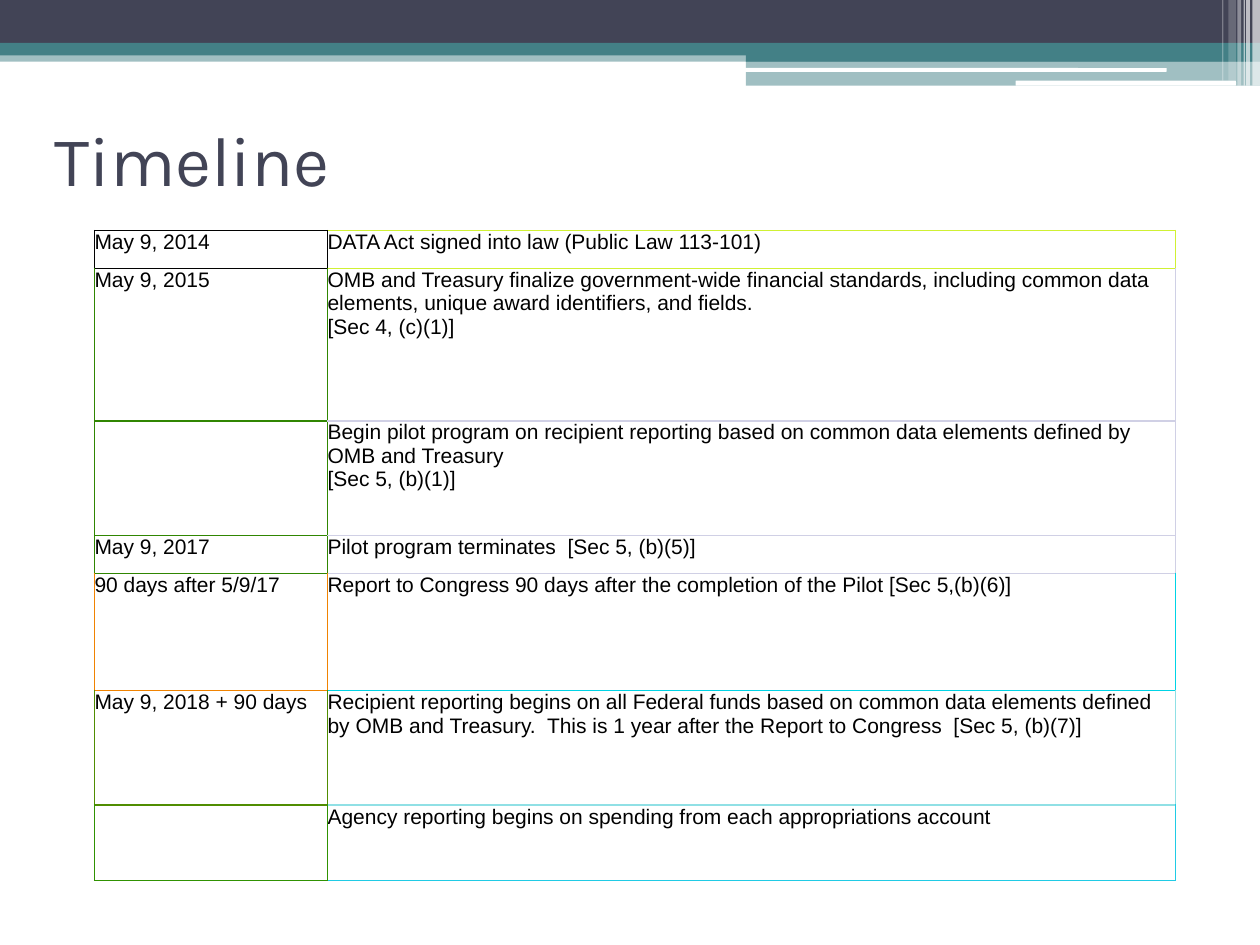
from typing import NamedTuple

from lxml import etree
from pptx import Presentation
from pptx.dml.color import RGBColor
from pptx.enum import shapes, text
from pptx.oxml import ns
from pptx.util import Inches, Pt

NAVY = RGBColor(0x42, 0x44, 0x56)
TEAL = RGBColor(0x43, 0x80, 0x86)
WHITE = RGBColor(0xFF, 0xFF, 0xFF)
BLACK = RGBColor(0x01, 0x01, 0x01)
LIME = RGBColor(0xD0, 0xF1, 0x34)
GREEN = RGBColor(0x30, 0x86, 0x01)
OLIVE = RGBColor(0x50, 0x8D, 0x01)
LEAF = RGBColor(0x30, 0x92, 0x01)
LILAC = RGBColor(0xD0, 0xD0, 0xE5)
ORANGE = RGBColor(0xF0, 0x83, 0x01)
CYAN = RGBColor(0x00, 0xD3, 0xE5)
PALE_CYAN = RGBColor(0x90, 0xE0, 0xE5)
SKY = RGBColor(0x20, 0xCB, 0xE5)


class Bar(NamedTuple):
    left: float
    top: float
    width: float
    height: float
    color: RGBColor
    alpha: int = 100
    rounded: bool = False


class Milestone(NamedTuple):
    height: float
    date: str
    event: str
    date_border: RGBColor
    event_border: RGBColor


BARS = [
    Bar(0, 0.4, 10, 0.09, TEAL, 50),
    Bar(0, 0, 10, 0.34, NAVY),
    Bar(0, 0.34, 10, 0.1, TEAL),
    Bar(5.92, 0.39, 4.08, 0.1, TEAL),
    Bar(5.92, 0.48, 4.08, 0.2, TEAL, 50),
    Bar(5.91, 0.54, 3.35, 0.03, WHITE, rounded=True),
    Bar(8.06, 0.64, 1.75, 0.04, WHITE, rounded=True),
    Bar(9.94, 0, 0.06, 0.68, WHITE, 65),
    Bar(9.89, 0, 0.03, 0.68, WHITE, 65),
    Bar(9.87, 0, 0.01, 0.68, WHITE, 60),
    Bar(9.82, 0, 0.03, 0.68, WHITE, 40),
    Bar(9.75, 0, 0.06, 0.64, WHITE, 20),
    Bar(9.7, 0, 0.01, 0.64, WHITE, 30),
]

COLUMNS = [1.85, 6.73]
MILESTONES = [
    Milestone(0.3, "May 9, 2014", "DATA Act signed into law (Public Law 113-101)", BLACK, LIME),
    Milestone(1.21, "May 9, 2015",
              "OMB and Treasury finalize government-wide financial standards, including "
              "common data elements, unique award identifiers, and fields.\n[Sec 4, (c)(1)]",
              GREEN, LILAC),
    Milestone(0.91, "",
              "Begin pilot program on recipient reporting based on common data elements "
              "defined by OMB and Treasury\n[Sec 5, (b)(1)]", GREEN, LILAC),
    Milestone(0.3, "May 9, 2017", "Pilot program terminates  [Sec 5, (b)(5)]", GREEN, LILAC),
    Milestone(0.93, "90 days after 5/9/17",
              "Report to Congress 90 days after the completion of the Pilot [Sec 5,(b)(6)]",
              ORANGE, CYAN),
    Milestone(0.91, "May 9, 2018 + 90 days",
              "Recipient reporting begins on all Federal funds based on common data elements "
              "defined by OMB and Treasury.  This is 1 year after the Report to Congress  "
              "[Sec 5, (b)(7)]", OLIVE, PALE_CYAN),
    Milestone(0.6, "", "Agency reporting begins on spending from each appropriations account",
              LEAF, SKY),
]


def add_bar(slide, bar: Bar) -> None:
    kind = shapes.MSO_SHAPE.ROUNDED_RECTANGLE if bar.rounded else shapes.MSO_SHAPE.RECTANGLE
    sp = slide.shapes.add_shape(kind, *(Inches(v) for v in bar[:4]))
    sp.shadow.inherit = False
    sp.line.fill.background()
    sp.fill.solid()
    sp.fill.fore_color.rgb = bar.color
    if bar.alpha < 100:
        color = sp.fill._xPr.find(".//" + ns.qn("a:srgbClr"))
        etree.SubElement(color, ns.qn("a:alpha"), val=str(bar.alpha * 1000))


def set_borders(cell, left: RGBColor, right: RGBColor, top: RGBColor, bottom: RGBColor) -> None:
    tc_pr = cell._tc.get_or_add_tcPr()
    for tag, color in zip(("lnL", "lnR", "lnT", "lnB"), (left, right, top, bottom)):
        ln = etree.SubElement(tc_pr, ns.qn("a:" + tag), w=str(Pt(1)))
        fill = etree.SubElement(ln, ns.qn("a:solidFill"))
        etree.SubElement(fill, ns.qn("a:srgbClr"), val=str(color))


def set_cell_text(cell, content: str) -> None:
    cell.margin_left = cell.margin_right = cell.margin_top = cell.margin_bottom = 0
    cell.text_frame.text = content
    for p in cell.text_frame.paragraphs:
        p.font.size = Pt(12)
        for r in p.runs:
            r.font.size = Pt(12)
            r.font.name = "Arial"
            r.font.color.rgb = BLACK


def add_timeline(slide, left: float, top: float) -> None:
    height = sum(m.height for m in MILESTONES)
    frame = slide.shapes.add_table(len(MILESTONES), len(COLUMNS), Inches(left), Inches(top),
                                   Inches(sum(COLUMNS)), Inches(height))
    table = frame.table
    table.first_row = table.horz_banding = False
    for column, width in zip(table.columns, COLUMNS):
        column.width = Inches(width)
    # Each cell shares its left and top edge colours with its neighbours
    above = MILESTONES[0]
    for row, m in zip(table.rows, MILESTONES):
        row.height = Inches(m.height)
        date, event = row.cells
        set_borders(date, m.date_border, m.date_border, above.date_border, m.date_border)
        set_borders(event, m.date_border, m.event_border, above.event_border, m.event_border)
        for cell, content in ((date, m.date), (event, m.event)):
            cell.fill.background()
            set_cell_text(cell, content)
        above = m


def main() -> None:
    prs = Presentation()
    prs.slide_width, prs.slide_height = Inches(10), Inches(7.5)
    slide = prs.slides.add_slide(prs.slide_layouts[5])

    # Header decoration
    for bar in BARS:
        add_bar(slide, bar)

    # Title
    title = slide.shapes.title
    title.left, title.top, title.width, title.height = (Inches(v) for v in (0.33, 0.67, 9, 1.17))
    tf = title.text_frame
    tf.text = "Timeline"
    tf.vertical_anchor = text.MSO_ANCHOR.MIDDLE
    p = tf.paragraphs[0]
    p.alignment = text.PP_ALIGN.LEFT
    r = p.runs[0]
    r.font.size = Pt(40)
    r.font.name = "Karla"
    r.font.color.rgb = NAVY

    # Milestone table
    add_timeline(slide, 0.75, 1.83)
    prs.save("out.pptx")


if __name__ == "__main__":
    main()
